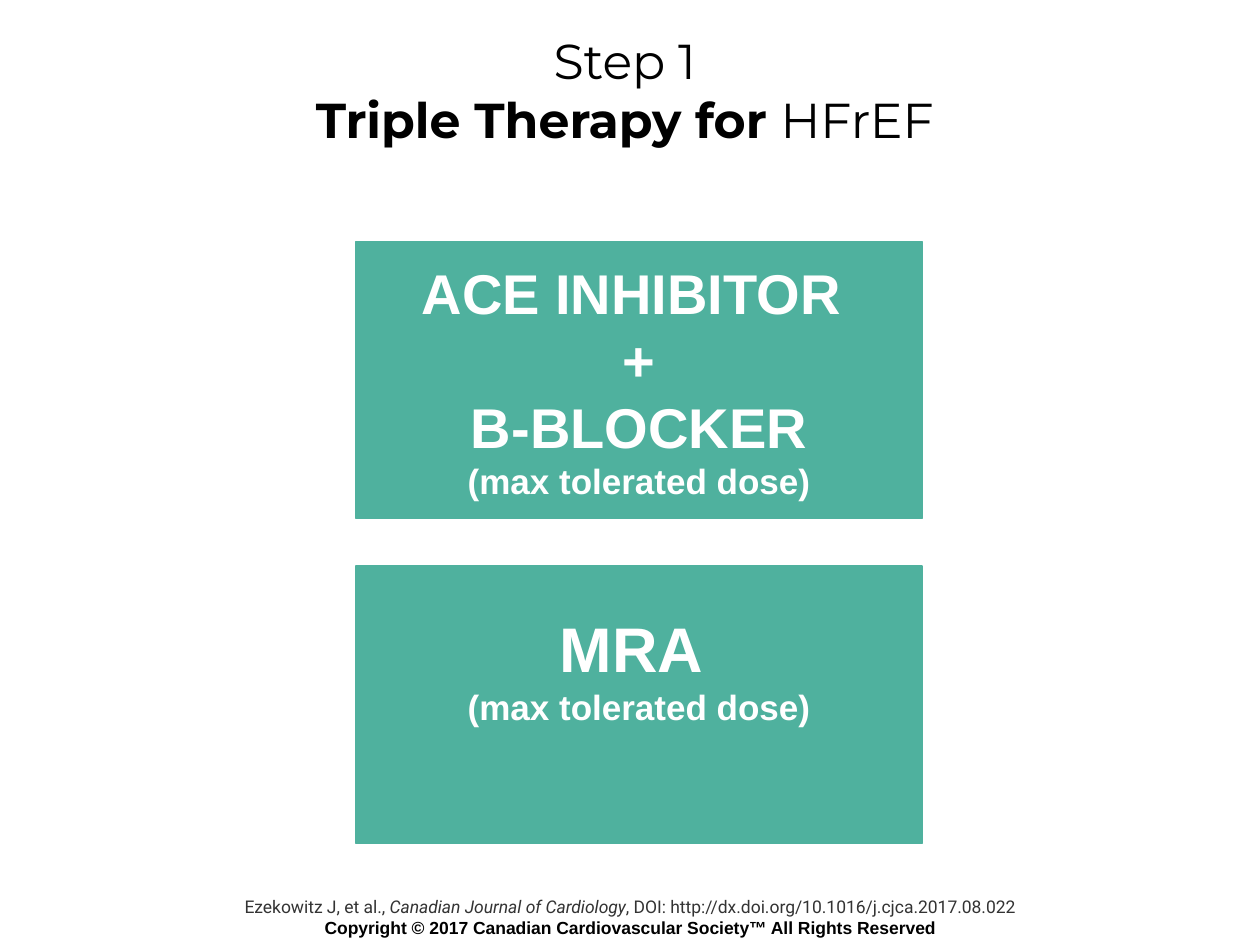
from pptx import Presentation
from pptx.dml.color import RGBColor
from pptx.enum.shapes import MSO_SHAPE
from pptx.enum.text import MSO_ANCHOR, PP_ALIGN
from pptx.util import Pt

THEME = {
    "green": "4FB19E", "white": "FFFFFF", "black": "000000", "gray": "333333",
    "head": ("Montserrat", 28, "black"),
    "cite": ("Roboto", 10, "gray"),
    "legal": ("Arial", 10, "black"),
    "drug": ("Arial", 32, "white"),
    "main": ("Arial", 36, "white"),
    "dose": ("Arial", 20, "white"),
}

TITLE = [
    [("Step 1", "head", "")],
    [("Triple Therapy for ", "head", "b"), ("HFrEF", "head", "")],
]
DOSE = [("(max tolerated dose)", "dose", "b")]
CARDS = [
    ([[("ACE INHIBITOR ", "drug", "b")],
      [("+", "drug", "b")],
      [("B-BLOCKER", "drug", "b")],
      DOSE], 3.6),
    ([[("MRA ", "main", "b")], DOSE], 45),
]
FOOT = [
    [("Ezekowitz J, et al., ", "cite", ""),
     ("Canadian Journal of Cardiology", "cite", "i"),
     (", DOI: http://dx.doi.org/10.1016/j.cjca.2017.08.022", "cite", "")],
    [("Copyright © 2017 Canadian Cardiovascular Society™ All Rights Reserved",
      "legal", "b")],
]

LEFT, TOP, WIDE, HIGH, GAP = 203.5, 138, 323.5, 158.5, 27


def color(name):
    return RGBColor.from_string(THEME[name])


def write(frame, lines, anchor, wrap):
    frame.word_wrap = wrap
    frame.vertical_anchor = anchor
    frame.text = "\n".join("" for _ in lines)
    for para, parts in zip(frame.paragraphs, lines):
        para.alignment = PP_ALIGN.CENTER
        for text, style, marks in parts:
            run = para.add_run()
            run.text = text
            face, size, ink = THEME[style]
            run.font.name = face
            run.font.size = Pt(size)
            run.font.color.rgb = color(ink)
            run.font.bold = "b" in marks
            run.font.italic = "i" in marks


def add_text(slide, area, lines, anchor):
    box = slide.shapes.add_textbox(*map(Pt, area))
    write(box.text_frame, lines, anchor, True)


def add_card(slide, top, lines, inset):
    card = slide.shapes.add_shape(
        MSO_SHAPE.RECTANGLE, Pt(LEFT), Pt(top), Pt(WIDE), Pt(HIGH))
    card.shadow.inherit = False
    card.fill.solid()
    card.fill.fore_color.rgb = color("green")
    card.line.color.rgb = color("green")
    card.line.width = Pt(0.75)
    card.text_frame.margin_bottom = Pt(inset)
    write(card.text_frame, lines, MSO_ANCHOR.MIDDLE, False)


def main():
    deck = Presentation()
    deck.slide_width, deck.slide_height = Pt(720), Pt(540)
    slide = deck.slides.add_slide(deck.slide_layouts[6])
    add_text(slide, (83, 508.5, 554, 31.5), FOOT, MSO_ANCHOR.TOP)
    add_text(slide, (19.5, 6, 675, 90), TITLE, MSO_ANCHOR.MIDDLE)
    for row, (lines, inset) in enumerate(CARDS):
        add_card(slide, TOP + row * (HIGH + GAP), lines, inset)
    deck.save("out.pptx")


if __name__ == "__main__":
    main()
